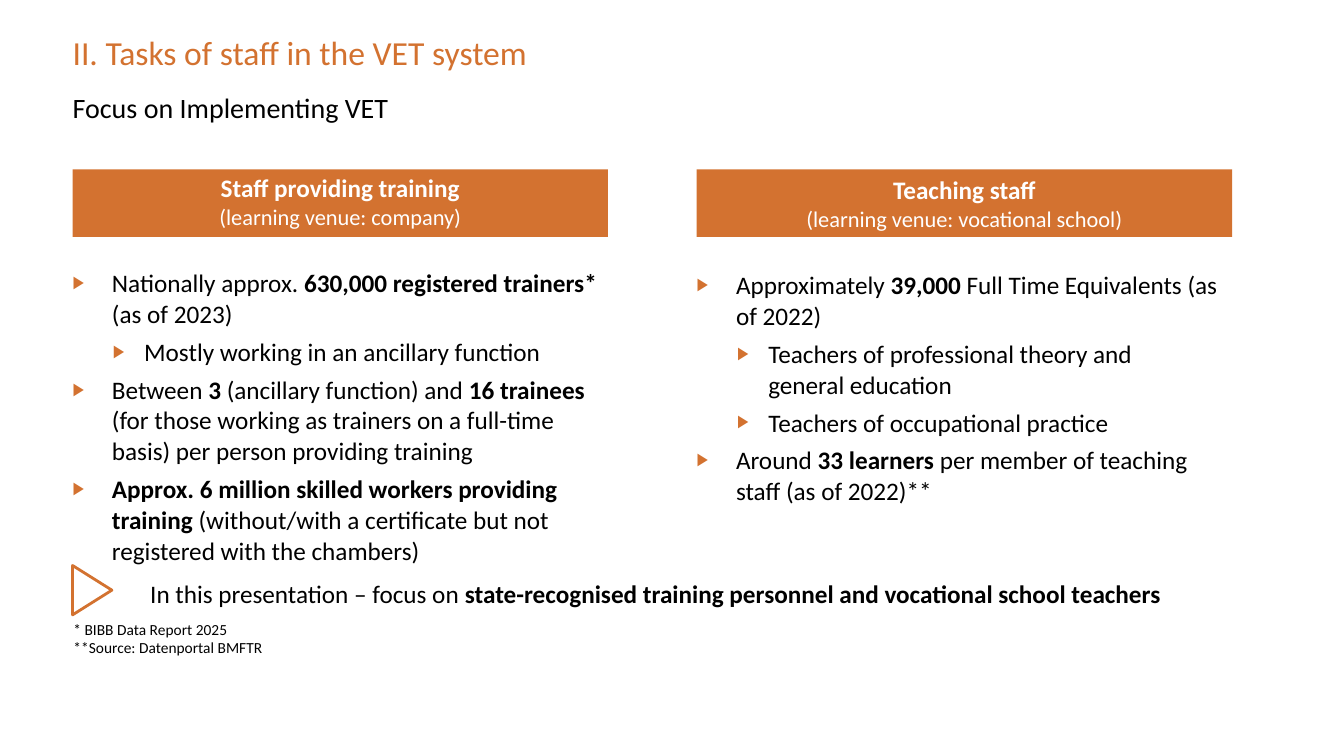
from lxml.etree import SubElement
from pptx import Presentation
from pptx.dml.color import RGBColor
from pptx.enum.shapes import MSO_SHAPE
from pptx.enum.text import MSO_ANCHOR, PP_ALIGN
from pptx.oxml.ns import qn
from pptx.util import Inches, Pt

ORANGE = RGBColor(0xD3, 0x72, 0x30)
BLACK = RGBColor(0, 0, 0)
WHITE = RGBColor(255, 255, 255)
INDENTS = [(0.39, 0.39), (0.71, 0.31)]
LEFT, RIGHT, WIDE = 0.72, 6.91, 5.31


def write(para, text, size=18, color=BLACK, align=None, before=0, line=None):
    para.alignment = align
    para.space_before = Pt(before)
    if line:
        para.line_spacing = line
    for part, words in enumerate(text.split("|")):
        for row, piece in enumerate(words.split("\n")):
            if row:
                para.add_line_break()
            if piece:
                run = para.add_run()
                run.text = piece
                run.font.name = "Calibri"
                run.font.size = Pt(size)
                run.font.bold = part % 2 == 1
                run.font.color.rgb = color


def mark(para, level):
    para.level = level
    left, hang = INDENTS[level]
    props = para._p.get_or_add_pPr()
    props.set("marL", str(Inches(left)))
    props.set("indent", str(-Inches(hang)))
    tint = SubElement(props, qn("a:buClr"))
    SubElement(tint, qn("a:srgbClr"), val=str(ORANGE))
    SubElement(props, qn("a:buSzPct"), val="70000")
    SubElement(props, qn("a:buFont"), typeface="Calibri")
    SubElement(props, qn("a:buChar"), char="▶")


class Deck:
    def __init__(self):
        self.file = Presentation()
        self.file.slide_width = Inches(13.33)
        self.file.slide_height = Inches(7.5)
        self.slide = self.file.slides.add_slide(self.file.slide_layouts[6])

    def frame(self, shape, pad=(0, 0)):
        frame = shape.text_frame
        frame.word_wrap = True
        frame.margin_left = frame.margin_right = Inches(pad[0])
        frame.margin_top = frame.margin_bottom = Inches(pad[1])
        return frame

    def rows(self, frame, count):
        return [frame.paragraphs[0]] + [frame.add_paragraph() for _ in range(count - 1)]

    def text(self, box, *lines, pad=(0, 0), **style):
        shape = self.slide.shapes.add_textbox(*map(Inches, box))
        frame = self.frame(shape, pad)
        for para, line in zip(self.rows(frame, len(lines)), lines):
            write(para, line, **style)

    def shape(self, kind, box):
        shape = self.slide.shapes.add_shape(kind, *map(Inches, box))
        shape.shadow.inherit = False
        return shape

    def banner(self, left, head, venue, line=None):
        shape = self.shape(MSO_SHAPE.RECTANGLE, (left, 1.68, WIDE, 0.67))
        shape.fill.solid()
        shape.fill.fore_color.rgb = ORANGE
        shape.line.fill.background()
        frame = self.frame(shape)
        frame.vertical_anchor = MSO_ANCHOR.MIDDLE
        top, low = self.rows(frame, 2)
        write(top, f"|{head}|", color=WHITE, align=PP_ALIGN.CENTER, line=line)
        write(low, venue, size=16, color=WHITE, align=PP_ALIGN.CENTER)

    def bullets(self, box, items):
        frame = self.frame(self.slide.shapes.add_textbox(*map(Inches, box)))
        for spot, (para, (level, words)) in enumerate(zip(self.rows(frame, len(items)), items)):
            mark(para, level)
            write(para, words, before=5 if spot else 0, line=Pt(22))

    def arrow(self, box):
        shape = self.shape(MSO_SHAPE.ISOSCELES_TRIANGLE, box)
        shape.rotation = 90
        shape.fill.background()
        shape.line.color.rgb = ORANGE
        shape.line.width = Pt(2)


def main():
    deck = Deck()
    deck.text((LEFT, 0.32, 9.84, 0.49), "II. Tasks of staff in the VET system", size=24, color=ORANGE)
    deck.text((LEFT, 0.9, 12.09, 0.48), "Focus on Implementing VET", size=20)
    deck.banner(LEFT, "Staff providing training", "(learning venue: company)", line=0.9)
    deck.banner(RIGHT, "Teaching staff", "(learning venue: vocational school)")
    deck.bullets((LEFT, 2.65, 5.39, 2.74), [
        (0, "Nationally approx. |630,000 registered trainers* |(as of 2023)"),
        (1, "Mostly working in an ancillary function"),
        (0, "Between |3| (ancillary function) and |16 trainees| (for those working "
            "as trainers on a full-time basis) per person providing training"),
        (0, "|Approx. 6 million skilled workers providing training| (without/with "
            "a certificate but not registered with the chambers)"),
    ])
    deck.bullets((RIGHT, 2.67, WIDE, 2.36), [
        (0, "Approximately |39,000| Full Time Equivalents (as of 2022)"),
        (1, "Teachers of professional theory and \ngeneral education"),
        (1, "Teachers of occupational practice"),
        (0, "Around |33 learners| per member of teaching staff (as of 2022)**"),
    ])
    deck.text((1.49, 5.74, 10.84, 0.23), "In this presentation – focus on "
              "|state-recognised training personnel and vocational school teachers|")
    deck.text((0.63, 6.1, 7.25, 0.47), "* BIBB Data Report 2025",
              "**Source: Datenportal BMFTR", pad=(0.1, 0.05), size=11)
    deck.arrow((0.67, 5.66, 0.49, 0.39))
    deck.file.save("out.pptx")


if __name__ == "__main__":
    main()
